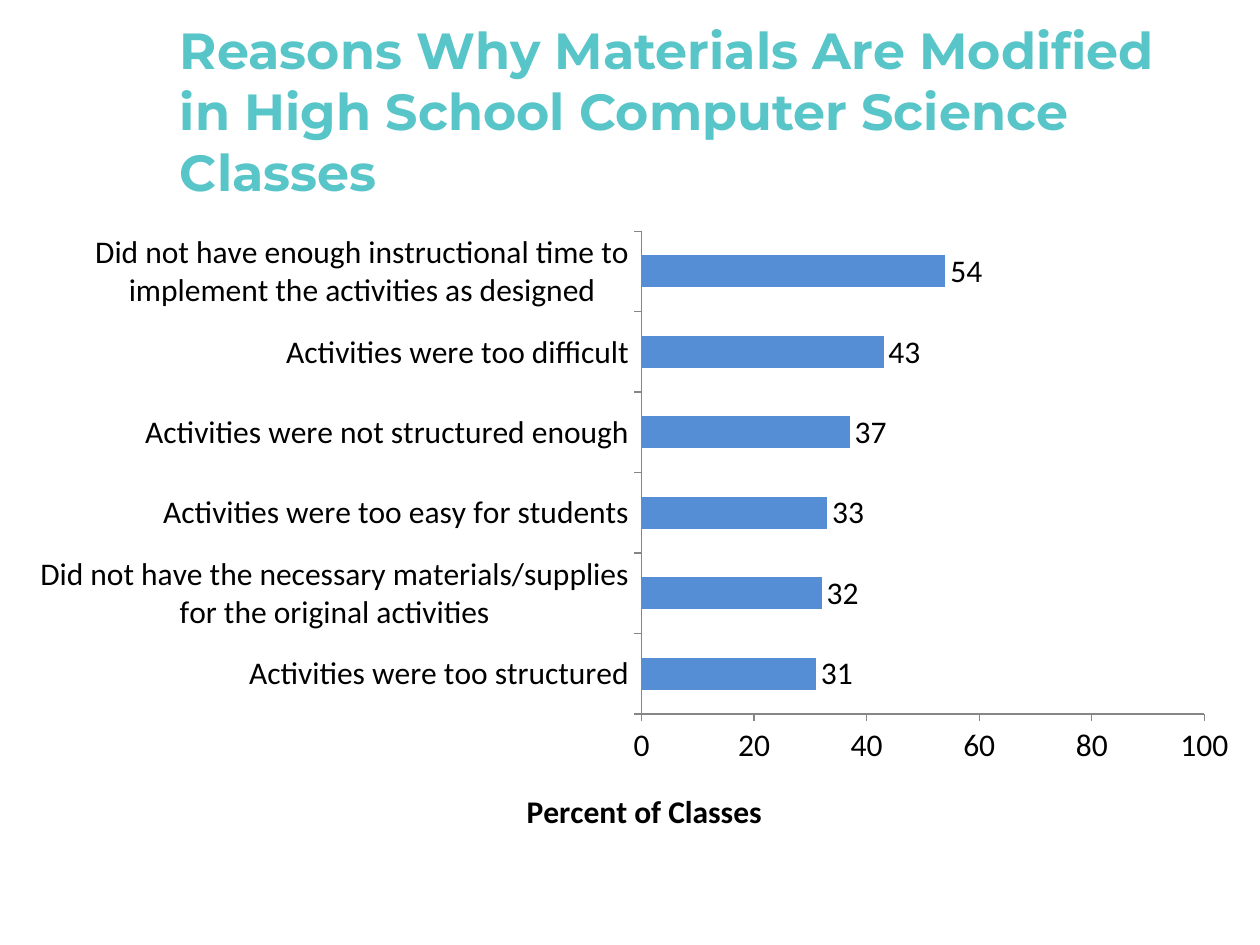
from dataclasses import dataclass

from lxml import etree
from pptx import Presentation
from pptx import util as u
from pptx.chart.data import CategoryChartData
from pptx.dml.color import RGBColor
from pptx.enum import chart as ch, text
from pptx.oxml.ns import qn


@dataclass(frozen=True)
class Theme:
    teal: str = "58C5C9"
    blue: str = "558ED5"
    black: str = "000000"
    gray: str = "868686"
    head: str = "Montserrat"
    body: str = "Calibri"
    big: int = 29
    mid: int = 18


T = Theme()

# Reasons from the bottom bar to the top one
ROWS = [
    ("Activities were too structured", 31),
    ("Did not have the necessary materials/supplies for the original activities", 32),
    ("Activities were too easy for students", 33),
    ("Activities were not structured enough", 37),
    ("Activities were too difficult", 43),
    ("Did not have enough instructional time to implement the activities as designed", 54),
]


def style(font, face=T.body, size=T.mid, color=T.black, bold=False):
    font.name, font.size, font.bold = face, u.Pt(size), bold
    font.color.rgb = RGBColor.from_string(color)


def add_text(slide, words, left, top, width, height, **form):
    box = slide.shapes.add_textbox(*map(u.Inches, (left, top, width, height)))
    frame = box.text_frame
    frame.word_wrap = True
    frame.vertical_anchor = text.MSO_ANCHOR.MIDDLE
    run = frame.paragraphs[0].add_run()
    run.text = words
    style(run.font, **form)


def place(part, spot, **marks):
    """Give a chart part a manual layout, in fractions of the chart."""
    old = part.find(qn("c:layout"))
    if old is not None:
        part.remove(old)
    lay = etree.Element(qn("c:layout"))
    man = etree.SubElement(lay, qn("c:manualLayout"))
    for tag, val in marks.items():
        etree.SubElement(man, qn(f"c:{tag}")).set("val", str(val))
    part.insert(spot, lay)


def add_bars(slide, left, top, width, height):
    data = CategoryChartData()
    data.categories = [name for name, _ in ROWS]
    data.add_series("Series 1", [val for _, val in ROWS])
    chart = slide.shapes.add_chart(
        ch.XL_CHART_TYPE.BAR_CLUSTERED,
        *map(u.Inches, (left, top, width, height)), data).chart
    chart.has_legend = chart.has_title = False
    style(chart.font)

    # Bars and their labels
    plot = chart.plots[0]
    plot.gap_width, plot.vary_by_categories = 150, False
    fill = plot.series[0].format.fill
    fill.solid()
    fill.fore_color.rgb = RGBColor.from_string(T.blue)
    plot.has_data_labels = True
    tags = plot.data_labels
    tags.show_value = True
    tags.position = ch.XL_LABEL_POSITION.OUTSIDE_END
    style(tags.font)

    # Axes
    for axis in (chart.category_axis, chart.value_axis):
        axis.has_major_gridlines = False
        axis.major_tick_mark = ch.XL_TICK_MARK.OUTSIDE
        axis.minor_tick_mark = ch.XL_TICK_MARK.NONE
        axis.format.line.color.rgb = RGBColor.from_string(T.gray)
        axis.format.line.width = u.Pt(0.75)
        style(axis.tick_labels.font)
    scale = chart.value_axis
    scale.minimum_scale, scale.maximum_scale, scale.major_unit = 0, 100, 20

    # Axis title
    title = scale.axis_title
    run = title.text_frame.paragraphs[0].add_run()
    run.text = "Percent of Classes"
    style(run.font, bold=True)
    place(title._element, 1, xMode="edge", yMode="edge", x=0.41, y=0.91)

    # Plot area
    area = chart._chartSpace.chart.plotArea
    place(area, 0, layoutTarget="inner", xMode="edge", yMode="edge",
          x=0.509, y=0.033, w=0.462, h=0.767)


def main():
    deck = Presentation()
    deck.slide_width, deck.slide_height = u.Inches(10), u.Inches(7.5)
    slide = deck.slides.add_slide(deck.slide_layouts[6])
    add_bars(slide, 0.17, 1.67, 9.67, 5)
    add_text(slide, "Reasons Why Materials Are Modified in High School Computer Science Classes",
             1.33, 0.25, 8.17, 1.25, face=T.head, size=T.big, color=T.teal, bold=True)
    deck.save("out.pptx")


if __name__ == "__main__":
    main()
